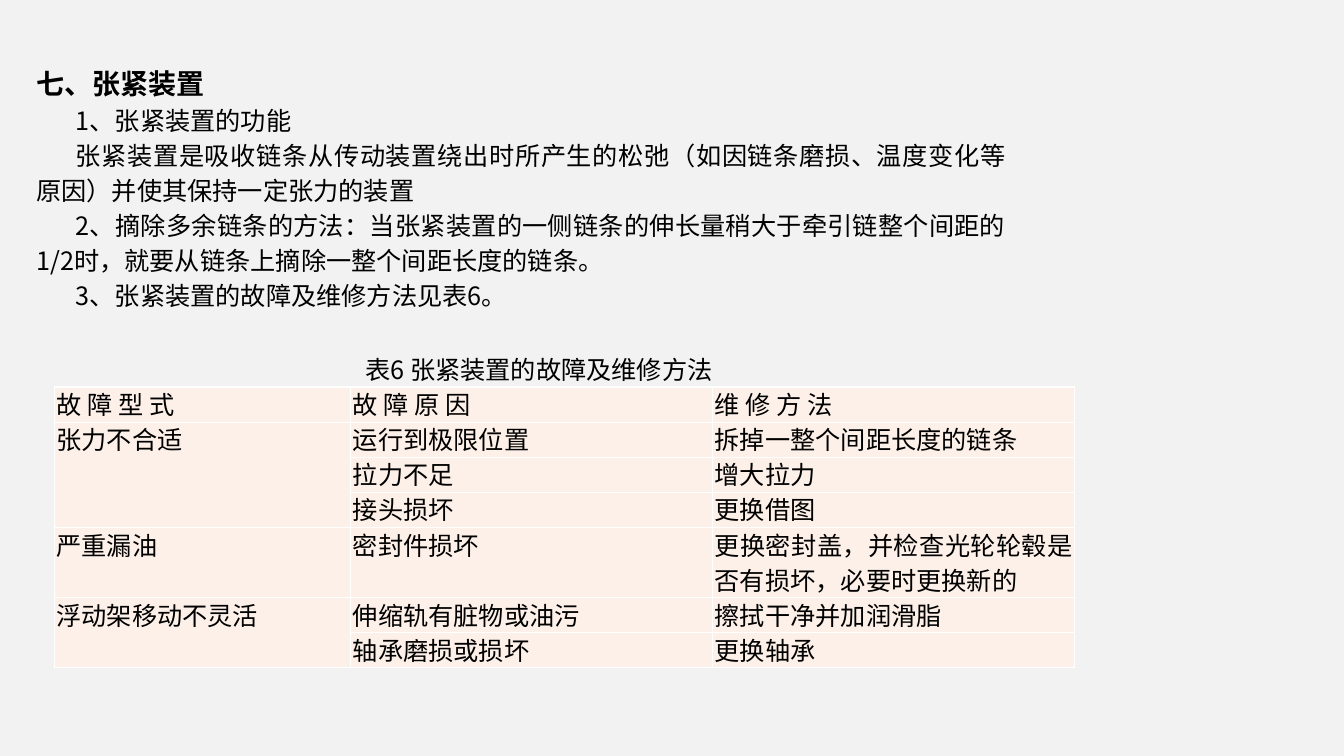
from lxml import etree
from pptx import Presentation
from pptx import util as u
from pptx.dml.color import RGBColor
from pptx.enum import text
from pptx.oxml import ns

PX = 9144  # 100 px to the inch
BACKGROUND = RGBColor(0xF2, 0xF2, 0xF2)
CELL = RGBColor(0xFD, 0xF0, 0xE8)
INK = RGBColor(0, 0, 0)
BORDER = "FFFFFF"
CJK, LATIN = "Noto Sans CJK SC", "Cabin"
LINE = u.Pt(25)

HEADING = "七、张紧装置"
POINTS = [
    "1、张紧装置的功能",
    "张紧装置是吸收链条从传动装置绕出时所产生的松弛（如因链条磨损、温度变化等原因）"
    "并使其保持一定张力的装置",
    "2、摘除多余链条的方法：当张紧装置的一侧链条的伸长量稍大于牵引链整个间距的1/2时，"
    "就要从链条上摘除一整个间距长度的链条。",
    "3、张紧装置的故障及维修方法见表6。",
]
CAPTION = "表6 张紧装置的故障及维修方法"
HEADERS = ("故 障 型 式", "故 障 原 因", "维 修 方 法")
FAULTS = {
    "张力不合适": [("运行到极限位置", "拆掉一整个间距长度的链条"),
              ("拉力不足", "增大拉力"),
              ("接头损坏", "更换借图")],
    "严重漏油": [("密封件损坏", "更换密封盖，并检查光轮轮毂是否有损坏，必要时更换新的")],
    "浮动架移动不灵活": [("伸缩轨有脏物或油污", "擦拭干净并加润滑脂"),
                 ("轴承磨损或损坏", "更换轴承")],
}
COLUMNS = (294, 359, 359)
ROW = 34


def px(*lengths):
    return [u.Emu(length * PX) for length in lengths]


def format_paragraph(paragraph, font=CJK, size=18, bold=False, indent=0,
                     align=text.PP_ALIGN.JUSTIFY, spacing=LINE):
    paragraph.alignment = align
    paragraph.line_spacing = spacing
    paragraph.space_before = u.Pt(0)
    paragraph.font.name = font
    paragraph.font.size = u.Pt(size)
    paragraph.font.bold = bold
    paragraph.font.color.rgb = INK
    properties = paragraph._p.get_or_add_pPr()
    properties.set("marL", "0")
    properties.set("indent", str(indent * PX))
    if properties.find(ns.qn("a:buNone")) is None:
        bullet = etree.Element(ns.qn("a:buNone"))
        properties.find(ns.qn("a:defRPr")).addprevious(bullet)


def fill_box(box, place, lines, **style):
    """Move a text shape to its place and write one paragraph per line."""
    box.left, box.top, box.width, box.height = px(*place)
    frame = box.text_frame
    frame.word_wrap = True
    frame.auto_size = text.MSO_AUTO_SIZE.NONE
    frame.vertical_anchor = text.MSO_ANCHOR.TOP
    frame.text = "\n".join(lines)
    for paragraph in frame.paragraphs:
        format_paragraph(paragraph, **style)


def add_explanation(slide, left, top, width, height):
    heading, points = slide.placeholders
    fill_box(heading, (left, top, width, 40), [HEADING], size=20, bold=True)
    fill_box(points, (left, top + 35, width, height - 35), POINTS, indent=39)


def add_caption(slide, *place):
    caption = slide.shapes.add_textbox(*px(*place))
    fill_box(caption, place, [CAPTION], indent=33,
             align=text.PP_ALIGN.CENTER, spacing=2.0)


def format_cell(cell):
    cell.margin_left = cell.margin_right = u.Emu(2 * PX)
    cell.margin_top = cell.margin_bottom = 0
    cell.fill.solid()
    cell.fill.fore_color.rgb = CELL
    properties = cell._tc.get_or_add_tcPr()
    for position, side in enumerate("LRTB"):
        line = etree.Element(ns.qn(f"a:ln{side}"), w=str(u.Pt(1)))
        solid = etree.SubElement(line, ns.qn("a:solidFill"))
        etree.SubElement(solid, ns.qn("a:srgbClr"), val=BORDER)
        properties.insert(position, line)
    format_paragraph(cell.text_frame.paragraphs[0], font=LATIN)


def add_fault_table(slide, left, top):
    rows = [HEADERS]
    merges = []
    for fault, remedies in FAULTS.items():
        merges.append((len(rows), len(rows) + len(remedies) - 1))
        for number, remedy in enumerate(remedies):
            rows.append(("" if number else fault, *remedy))
    place = px(left, top, sum(COLUMNS), ROW * len(rows))
    table = slide.shapes.add_table(len(rows), len(COLUMNS), *place).table
    table.first_row = table.horz_banding = False
    for column, width in zip(table.columns, px(*COLUMNS)):
        column.width = width
    for row, words in zip(table.rows, rows):
        for cell, word in zip(row.cells, words):
            cell.text = word
            format_cell(cell)
    for first, last in merges:
        if last > first:
            table.cell(first, 0).merge(table.cell(last, 0))


def main():
    deck = Presentation()
    deck.slide_width, deck.slide_height = px(1333, 750)
    slide = deck.slides.add_slide(deck.slide_layouts[1])
    slide.background.fill.solid()
    slide.background.fill.fore_color.rgb = BACKGROUND
    add_explanation(slide, 26, 60, 982, 251)
    add_fault_table(slide, 54, 384)
    add_caption(slide, 184, 317, 668, 58)
    deck.save("out.pptx")


if __name__ == "__main__":
    main()
